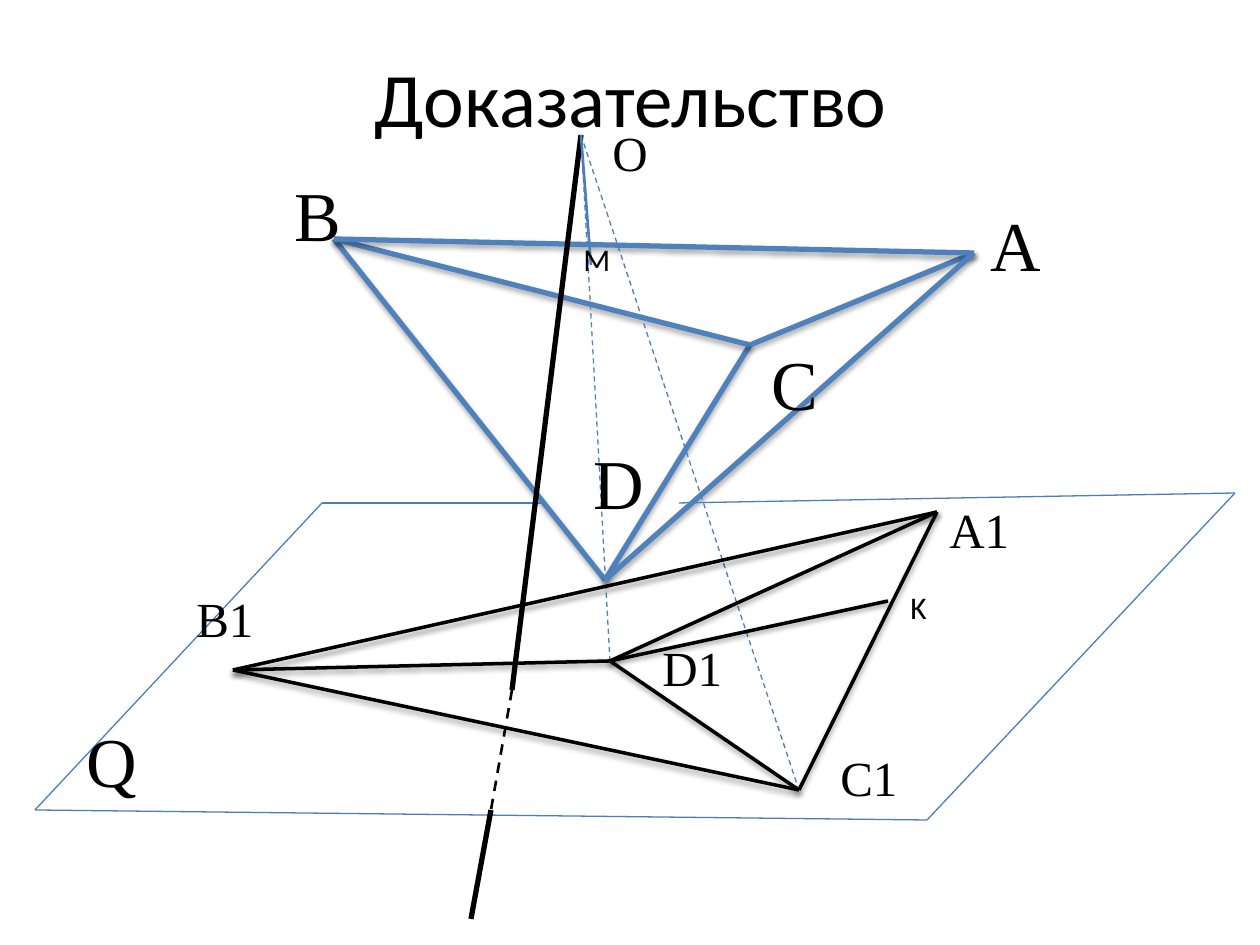
from lxml import etree
from pptx import Presentation
from pptx.dml.color import RGBColor
from pptx.enum.dml import MSO_LINE
from pptx.enum.shapes import MSO_CONNECTOR
from pptx.enum.text import MSO_ANCHOR, PP_ALIGN
from pptx.oxml.ns import qn
from pptx.util import Pt

STRAIGHT = MSO_CONNECTOR.STRAIGHT
DASH = MSO_LINE.DASH
BLUE = RGBColor(0x4F, 0x81, 0xBD)
THIN_BLUE = RGBColor(0x4B, 0x7E, 0xBC)
BLACK = RGBColor(0, 0, 0)
SERIF = "Times New Roman"
SANS = "Calibri"
PX = 914400 / 126  # EMU per pixel
# Shadow distance in EMU and opacity in thousandths of a percent
BLUE_SHADOW = (23000, 35000)
BLACK_SHADOW = (20000, 38000)


def px(value):
    return round(value * PX)


def add_line(shapes, start, end, color, width, dash=None, shadow=None):
    connector = shapes.add_connector(STRAIGHT, *map(px, start + end))
    connector.line.color.rgb = color
    connector.line.width = Pt(width)
    if dash:
        connector.line.dash_style = dash
    effects = etree.SubElement(connector._element.spPr, qn("a:effectLst"))
    if shadow:
        distance, opacity = shadow
        outer = etree.SubElement(effects, qn("a:outerShdw"), blurRad="40000",
                                 dist=str(distance), dir="5400000", rotWithShape="0")
        shadow_color = etree.SubElement(outer, qn("a:srgbClr"), val="000000")
        etree.SubElement(shadow_color, qn("a:alpha"), val=str(opacity))


presentation = Presentation()
presentation.slide_width = px(1260)
presentation.slide_height = px(945)
slide = presentation.slides.add_slide(presentation.slide_layouts[5])
shapes = slide.shapes

# Title
title = shapes.title
title.left, title.top, title.width, title.height = map(px, (64, 0, 1134, 193))
title.text_frame.text = "Доказательство"
title.text_frame.vertical_anchor = MSO_ANCHOR.MIDDLE
paragraph = title.text_frame.paragraphs[0]
paragraph.alignment = PP_ALIGN.CENTER
paragraph.font.size = Pt(44)
paragraph.font.name = SANS
paragraph.font.color.rgb = BLACK

# Points of the drawing
A, B, C, D = (974, 253), (334, 239), (750, 345), (605, 580)
A1, B1, C1, D1 = (937, 512), (233, 670), (799, 790), (610, 661)
O, M, K = (581, 135), (591, 265), (888, 601)
AXIS_ENTRY, AXIS_EXIT, AXIS_END = (512, 690), (491, 810), (471, 919)
PLANE = [(541, 503), (322, 503), (35, 810), (927, 820), (1235, 493), (679, 503)]

# Tetrahedron ABCD
tetrahedron = shapes.add_group_shape()
for start, end in [(B, D), (D, C), (C, B), (C, A), (A, B), (A, D)]:
    add_line(tetrahedron.shapes, start, end, BLUE, 3, shadow=BLUE_SHADOW)

# Projecting rays
add_line(shapes, C1, D1, BLACK, 2, shadow=BLACK_SHADOW)
add_line(shapes, D1, O, BLUE, 0.75, DASH)
add_line(shapes, O, C1, THIN_BLUE, 0.75, DASH)

# Projection A1B1C1D1
projection = shapes.add_group_shape()
for start, end in [(B1, A1), (B1, C1), (C1, A1), (B1, D1), (D1, A1)]:
    add_line(projection.shapes, start, end, BLACK, 2, shadow=BLACK_SHADOW)

# Plane Q, open at the back edge
plane = shapes.add_group_shape()
for start, end in zip(PLANE, PLANE[1:]):
    add_line(plane.shapes, start, end, THIN_BLUE, 0.75)

# Axis through the plane, dashed where hidden
add_line(shapes, O, AXIS_ENTRY, BLACK, 3)
add_line(shapes, AXIS_ENTRY, AXIS_EXIT, BLACK, 1.5, DASH)
add_line(shapes, AXIS_EXIT, AXIS_END, BLACK, 3)

# Segments OM and D1K
add_line(shapes, O, M, THIN_BLUE, 1.5)
add_line(shapes, D1, K, BLACK, 2, shadow=BLACK_SHADOW)

# Point labels, by style: font, size, box width and height, places
LABELS = [
    (SERIF, 40, 59, 97, [("C", 759, 334), ("B", 282, 165), ("A", 978, 195),
                         ("D", 581, 433), ("Q", 74, 711)]),
    (SERIF, 28, 89, 72, [("A1", 937, 493), ("B1", 184, 582),
                         ("C1", 828, 741), ("D1", 650, 631)]),
    (SERIF, 28, 69, 72, [("O", 600, 116)]),
    (SANS, 18, 39, 50, [("M", 571, 234), ("K", 898, 582)]),
]
for font_name, size, width, height, places in LABELS:
    for text, left, top in places:
        label = shapes.add_textbox(px(left), px(top), px(width), px(height))
        label.text_frame.word_wrap = True
        label.text_frame.text = text
        paragraph = label.text_frame.paragraphs[0]
        paragraph.font.name = font_name
        paragraph.font.size = Pt(size)
        paragraph.font.color.rgb = BLACK

presentation.save("out.pptx")
